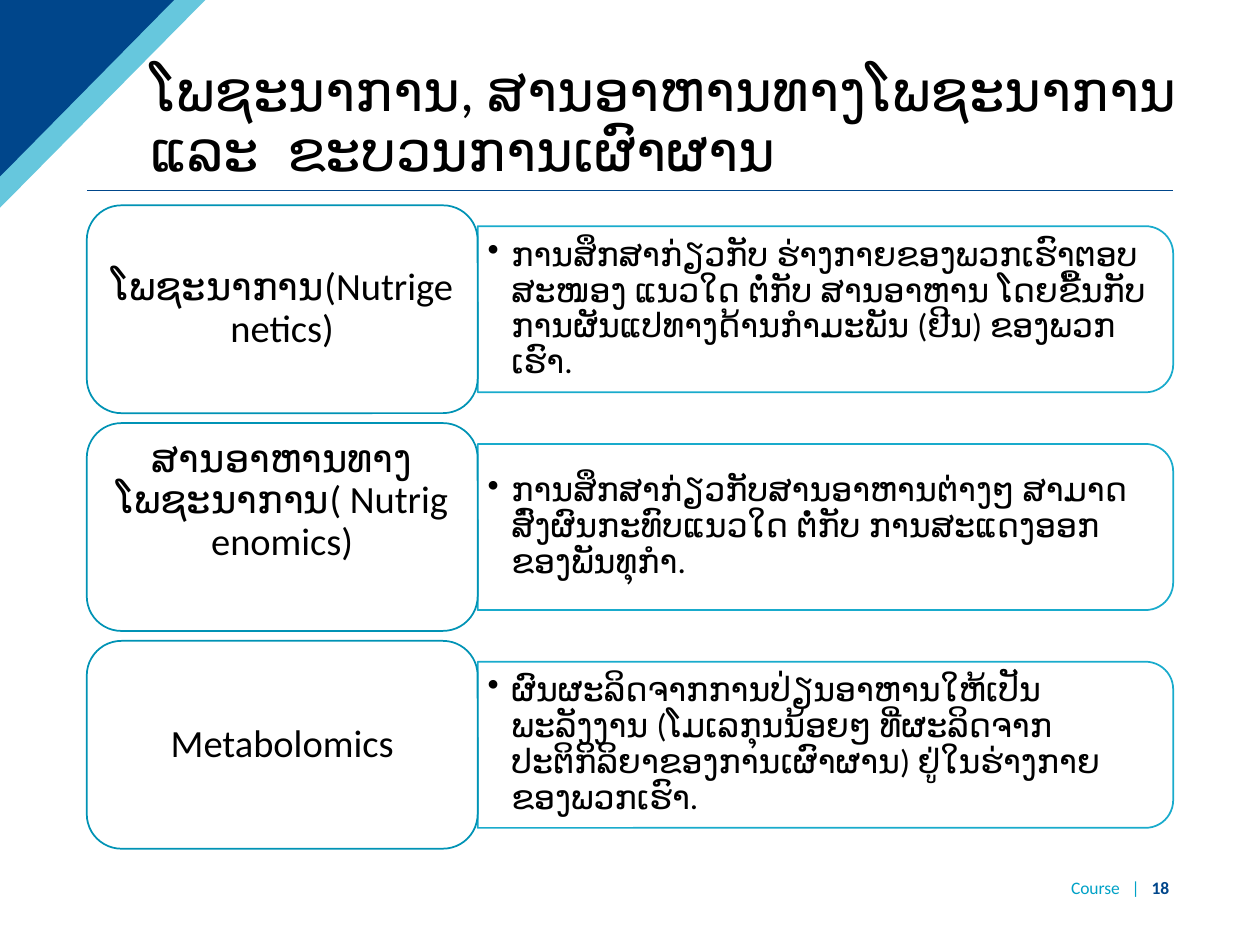
import pptx
import pptx.dml.color
import pptx.enum.shapes
import pptx.enum.text
import pptx.oxml.ns
import pptx.util
from lxml import etree

Cm = pptx.util.Cm
Pt = pptx.util.Pt
RGBColor = pptx.dml.color.RGBColor
MSO_SHAPE = pptx.enum.shapes.MSO_SHAPE
MSO_ANCHOR = pptx.enum.text.MSO_ANCHOR
PP_ALIGN = pptx.enum.text.PP_ALIGN
qn = pptx.oxml.ns.qn

BLACK = RGBColor(0x00, 0x00, 0x00)
WHITE = RGBColor(0xFF, 0xFF, 0xFF)
NAVY = RGBColor(0x00, 0x46, 0x8B)
CYAN = RGBColor(0x00, 0xA2, 0xC7)
TEAL = RGBColor(0x00, 0x93, 0xB5)

ROWS = [
    ("ໂພຊະນາການ(Nutrigenetics)", MSO_ANCHOR.MIDDLE,
     "ການສຶກສາກ່ຽວກັບ ຮ່າງກາຍຂອງພວກເຮົາຕອບສະໜອງ ແນວໃດ ຕໍ່ກັບ ສານອາຫານ "
     "ໂດຍຂື້ນກັບການຜັນແປທາງດ້ານກຳມະພັນ (ຢີນ) ຂອງພວກເຮົາ."),
    ("ສານອາຫານທາງໂພຊະນາການ( Nutrigenomics)", MSO_ANCHOR.TOP,
     "ການສຶກສາກ່ຽວກັບສານອາຫານຕ່າງໆ ສາມາດສົ່ງຜົນກະທົບແນວໃດ ຕໍ່ກັບ "
     "ການສະແດງອອກຂອງພັນທຸກຳ."),
    ("Metabolomics", MSO_ANCHOR.MIDDLE,
     "ຜົນຜະລິດຈາກການປ່ຽນອາຫານໃຫ້ເປັນພະລັງງານ (ໂມເລກຸນນ້ອຍໆ "
     "ທີ່ຜະລິດຈາກປະຕິກິລິຍາຂອງການເຜົາຜານ) ຢູ່ໃນຮ່າງກາຍຂອງພວກເຮົາ."),
]
LEFT, TOP, PITCH = Cm(1.75), Cm(4.14), Cm(4.39)
LABEL_WIDTH, LABEL_HEIGHT = Cm(7.88), Cm(4.19)
DETAIL_WIDTH, DETAIL_HEIGHT = Cm(14.02), Cm(3.35)
TEXT_WIDTH, TEXT_HEIGHT = Cm(13.87), Cm(3.02)


def write_text(shape, text, size, anchor, inset_x, inset_y):
    frame = shape.text_frame
    frame.word_wrap = True
    frame.vertical_anchor = anchor
    frame.margin_left = frame.margin_right = inset_x
    frame.margin_top = frame.margin_bottom = inset_y
    paragraph = frame.paragraphs[0]
    paragraph.text = text
    paragraph.line_spacing = 0.9
    paragraph.font.name = "Calibri"
    paragraph.font.size = size
    paragraph.font.color.rgb = BLACK
    return paragraph


def set_opacity(fill_owner, percent):
    color = fill_owner.find(".//" + qn("a:srgbClr"))
    etree.SubElement(color, qn("a:alpha"), val=str(percent * 1000))


presentation = pptx.Presentation()
presentation.slide_width = Cm(25.4)
presentation.slide_height = Cm(19.05)
slide = presentation.slides.add_slide(presentation.slide_layouts[5])
shapes = slide.shapes

# Corner triangles
for width, height, color, opacity in [(Cm(4.14), Cm(4.19), CYAN, 60),
                                      (Cm(3.51), Cm(3.56), NAVY, 100)]:
    builder = shapes.build_freeform(0, 0)
    builder.add_line_segments([(width, 0), (0, height)], close=True)
    triangle = builder.convert_to_shape()
    triangle.shadow.inherit = False
    triangle.fill.solid()
    triangle.fill.fore_color.rgb = color
    triangle.line.fill.background()
    if opacity < 100:
        set_opacity(triangle.element.spPr, opacity)

# Title and rule
title = shapes.title
title.left, title.top, title.width, title.height = Cm(2.79), Cm(1.02), Cm(21.89), Cm(2.82)
heading = write_text(title, "ໂພຊະນາການ, ສານອາຫານທາງໂພຊະນາການ ແລະ  ຂະບວນການເຜົາຜານ",
                     Pt(32), MSO_ANCHOR.BOTTOM, Cm(0.25), Cm(0.13))
heading.alignment = PP_ALIGN.LEFT

rule = shapes.add_connector(pptx.enum.shapes.MSO_CONNECTOR.STRAIGHT,
                            LEFT, Cm(3.84), Cm(23.65), Cm(3.84))
rule.line.color.rgb = NAVY
rule.line.width = Pt(0.75)
etree.SubElement(rule.element.spPr, qn("a:effectLst"))

# One label and one description per row
detail_left = LEFT + LABEL_WIDTH
for index, (term, anchor, description) in enumerate(ROWS):
    top = TOP + index * PITCH
    middle = top + LABEL_HEIGHT // 2

    # The panel is a quarter turn from upright, so its sides are swapped.
    panel = shapes.add_shape(MSO_SHAPE.ROUND_2_SAME_RECTANGLE,
                             detail_left + (DETAIL_WIDTH - DETAIL_HEIGHT) // 2,
                             middle - DETAIL_WIDTH // 2, DETAIL_HEIGHT, DETAIL_WIDTH)
    panel.rotation = 90
    label = shapes.add_shape(MSO_SHAPE.ROUNDED_RECTANGLE, LEFT, top,
                             LABEL_WIDTH, LABEL_HEIGHT)
    for shape, color in [(panel, CYAN), (label, TEAL)]:
        shape.shadow.inherit = False
        shape.fill.solid()
        shape.fill.fore_color.rgb = WHITE
        shape.line.color.rgb = color
        shape.line.width = Pt(1)
    set_opacity(panel.element.spPr.find(qn("a:ln")), 90)

    paragraph = write_text(label, term, Pt(22), anchor, Cm(0.23), Cm(0.12))
    paragraph.alignment = PP_ALIGN.CENTER

    detail = shapes.add_textbox(detail_left, middle - TEXT_HEIGHT // 2,
                                TEXT_WIDTH, TEXT_HEIGHT)
    paragraph = write_text(detail, description, Pt(19), MSO_ANCHOR.MIDDLE,
                           Cm(0.2), Cm(0.1))
    properties = paragraph._p.get_or_add_pPr()
    properties.set("marL", str(Cm(0.48)))
    properties.set("indent", str(-Cm(0.48)))
    bullet = etree.Element(qn("a:buChar"), char="•")
    properties.find(qn("a:defRPr")).addprevious(bullet)

# Footer
footer = shapes.add_textbox(Cm(19.63), Cm(17.63), Cm(4.19), Cm(0.53))
footer.text_frame.word_wrap = True
footer.text_frame.vertical_anchor = MSO_ANCHOR.MIDDLE
paragraph = footer.text_frame.paragraphs[0]
paragraph.alignment = PP_ALIGN.RIGHT
paragraph.font.name = "Calibri"
paragraph.font.size = Pt(10)
for text, color, bold in [("Course   |   ", CYAN, False), ("18", NAVY, True)]:
    run = paragraph.add_run()
    run.text = text
    run.font.color.rgb = color
    run.font.bold = bold

presentation.save("out.pptx")
